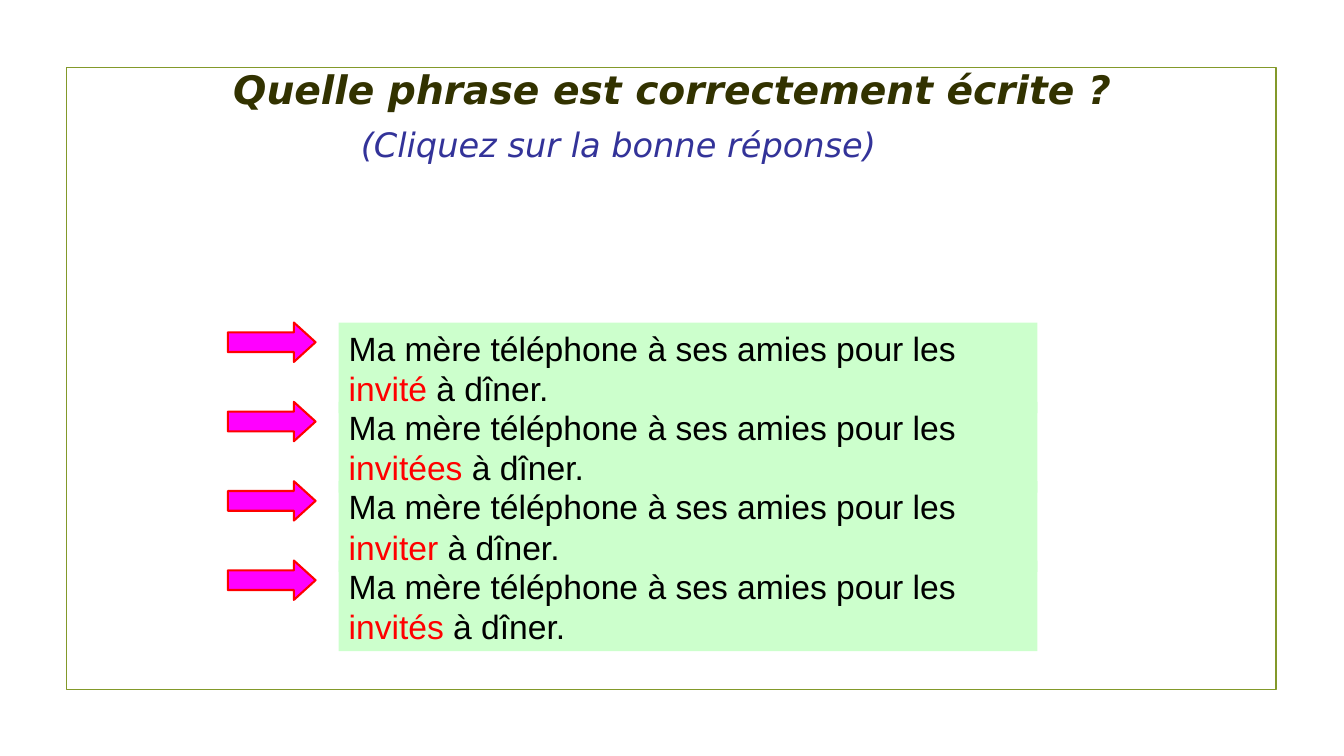
"""Build a French quiz slide with four answers to choose from."""
from pptx import Presentation
from pptx.dml.color import RGBColor
from pptx.enum.shapes import MSO_SHAPE as Preset
from pptx.enum.text import MSO_ANCHOR as Anchor, PP_ALIGN as Align
from pptx.util import Inches, Pt


def add_shape(preset, left, top, width, height, fill=None, line=None, weight=1):
    shape = slide.shapes.add_shape(
        preset, Inches(left), Inches(top), Inches(width), Inches(height))
    shape.shadow.inherit = False
    for part, color in ((shape.fill, fill), (shape.line.fill, line)):
        if color:
            part.solid()
            part.fore_color.rgb = RGBColor.from_string(color)
        else:
            part.background()
    if line:
        shape.line.width = Pt(weight)
    return shape


def style_font(font, name, size, color, bold=False, italic=False):
    font.name, font.size = name, Pt(size)
    font.bold, font.italic = bold, italic
    font.color.rgb = RGBColor.from_string(color)


presentation = Presentation()
presentation.slide_width, presentation.slide_height = Inches(13.33), Inches(7.5)
slide = presentation.slides.add_slide(presentation.slide_layouts[5])

add_shape(Preset.RECTANGLE, 0.66, 0.67, 12, 6.17, line="83992A", weight=1.25)

title = slide.shapes.title
title.left, title.top = Inches(1.94), Inches(0.6)
title.width, title.height = Inches(9.45), Inches(0.57)
title.text_frame.text = "Quelle phrase est correctement écrite ?"
title.text_frame.vertical_anchor = Anchor.MIDDLE
paragraph = title.text_frame.paragraphs[0]
paragraph.alignment = Align.CENTER
style_font(paragraph.font, "DejaVu Sans", 28, "323200", bold=True, italic=True)

hint = slide.shapes.add_textbox(Inches(3.48), Inches(1.18), Inches(6.26), Inches(0.51))
hint.text_frame.word_wrap = True
hint.text_frame.text = "(Cliquez sur la bonne réponse)"
style_font(hint.text_frame.paragraphs[0].font, "DejaVu Sans", 24, "333399", italic=True)

for row, answer in enumerate(("invité", "invitées", "inviter", "invités")):
    top = 3.2 + 0.787 * row
    box = add_shape(Preset.RECTANGLE, 3.36, top, 6.93, 0.9, fill="CCFFCC")
    box.text_frame.word_wrap = True
    box.text_frame.vertical_anchor = Anchor.MIDDLE
    paragraph = box.text_frame.paragraphs[0]
    paragraph.alignment = Align.LEFT
    for text, color in (("Ma mère téléphone à ses amies pour les ", "000000"),
                        (answer, "FF0000"), (" à dîner.", "000000")):
        run = paragraph.add_run()
        run.text = text
        style_font(run.font, "Arial", 24, color)

    arrow = add_shape(Preset.RIGHT_ARROW, 2.26, top, 0.87, 0.39,
                      fill="FF00FF", line="FF0000", weight=1.5)
    arrow.adjustments[1] = 0.55

presentation.save("out.pptx")
